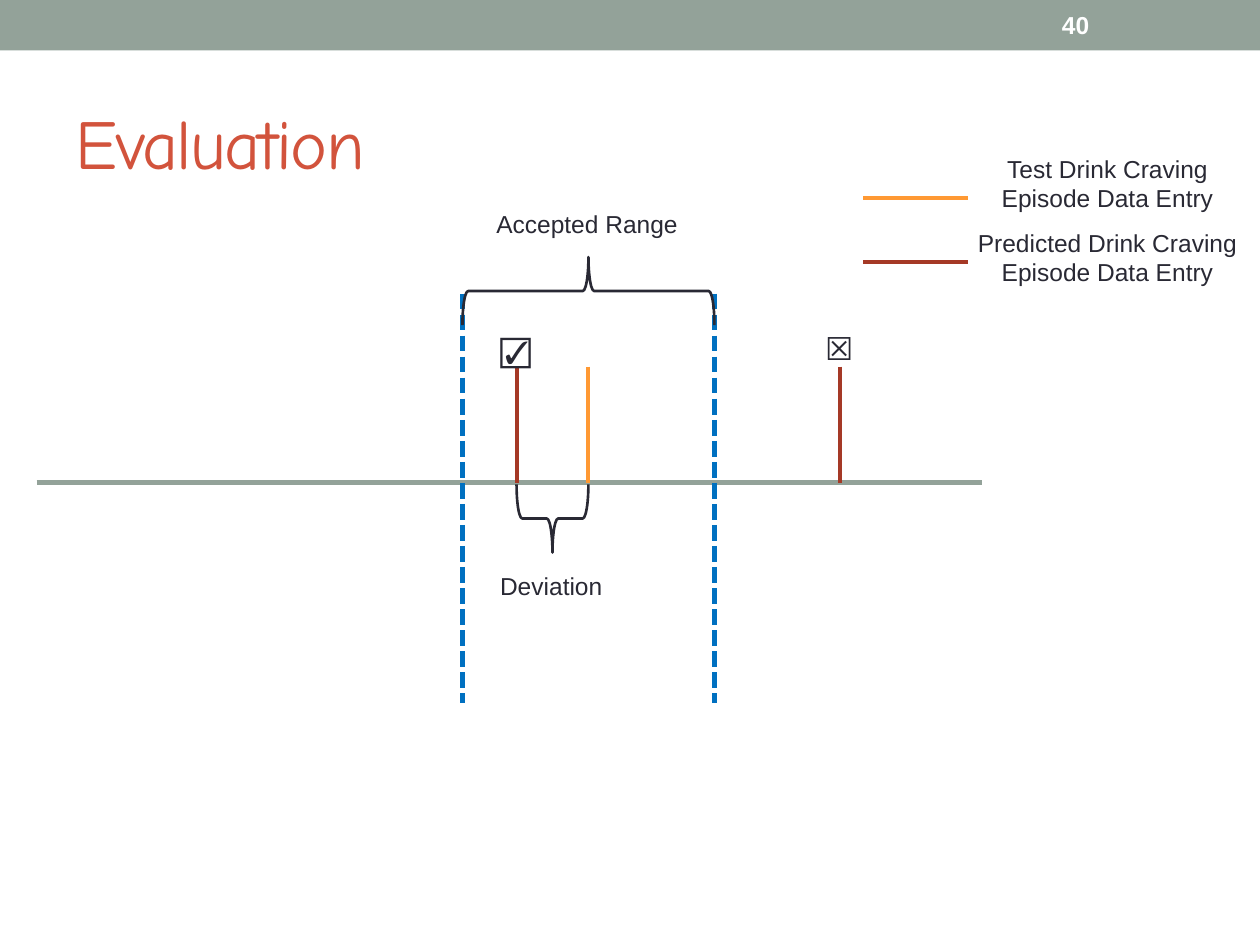
from pptx import Presentation
from pptx.dml.color import RGBColor
from pptx.enum.dml import MSO_LINE
from pptx.enum.shapes import MSO_CONNECTOR, MSO_SHAPE
from pptx.enum.text import MSO_ANCHOR, MSO_AUTO_SIZE, PP_ALIGN
from pptx.oxml.xmlchemy import OxmlElement
from pptx.util import Inches, Pt

SAGE = RGBColor(0x93, 0xA2, 0x99)
RED = RGBColor(0xD2, 0x53, 0x3C)
DARK_RED = RGBColor(0xA5, 0x39, 0x26)
ORANGE = RGBColor(0xFF, 0x99, 0x33)
BLUE = RGBColor(0x00, 0x70, 0xC0)
INK = RGBColor(0x29, 0x29, 0x34)
WHITE = RGBColor(0xFF, 0xFF, 0xFF)


def box_inches(*lengths):
    return [Inches(length) for length in lengths]


def add_run(paragraph, text, size, color, font="Arial", bold=False):
    run = paragraph.add_run()
    run.text = text
    run.font.name = font
    run.font.size = Pt(size)
    run.font.bold = bold
    run.font.color.rgb = color
    return run


def add_label(slide, box, text, size=14, color=INK, bold=False,
              align=PP_ALIGN.LEFT, wrap=False, anchor=MSO_ANCHOR.TOP):
    frame = slide.shapes.add_textbox(*box_inches(*box)).text_frame
    frame.word_wrap = wrap
    frame.auto_size = MSO_AUTO_SIZE.NONE if bold else MSO_AUTO_SIZE.SHAPE_TO_FIT_TEXT
    frame.vertical_anchor = anchor
    frame.paragraphs[0].alignment = align
    add_run(frame.paragraphs[0], text, size, color, bold=bold)


def add_line(slide, start, end, color, width=2.25, dash=None):
    line = slide.shapes.add_connector(
        MSO_CONNECTOR.STRAIGHT, *box_inches(*start, *end))
    line.line.color.rgb = color
    line.line.width = Pt(width)
    if dash:
        line.line.dash_style = dash
    line._element.spPr.append(OxmlElement("a:effectLst"))


def add_brace(slide, center_x, center_y, span, depth, rotation):
    """Draw a horizontal brace, given its size as seen after rotation."""
    brace = slide.shapes.add_shape(MSO_SHAPE.LEFT_BRACE, *box_inches(
        center_x - depth / 2, center_y - span / 2, depth, span))
    brace.rotation = rotation
    brace.shadow.inherit = False
    brace.fill.background()
    brace.line.color.rgb = INK
    brace.line.width = Pt(1.5)


def add_header(slide, left, top, width, height):
    band = slide.shapes.add_shape(
        MSO_SHAPE.RECTANGLE, *box_inches(left, top, width, height))
    band.shadow.inherit = False
    band.fill.solid()
    band.fill.fore_color.rgb = SAGE
    band.line.fill.background()
    add_label(slide, (left + width - 1.67, top + 0.02, 1.17, height - 0.04), "40",
              color=WHITE, bold=True, wrap=True, anchor=MSO_ANCHOR.MIDDLE)


def add_title(slide, left, top, width, height):
    title = slide.shapes.title
    title.left, title.top, title.width, title.height = box_inches(
        left, top, width, height)
    frame = title.text_frame
    frame.vertical_anchor = MSO_ANCHOR.MIDDLE
    frame.auto_size = MSO_AUTO_SIZE.NONE
    frame.paragraphs[0].alignment = PP_ALIGN.LEFT
    run = add_run(frame.paragraphs[0], "Evaluation", 40, RED, "Comic Neue")
    run.font._element.set("spc", "-100")


def add_timeline(slide, left, top, width, height):
    axis = top + 2.22
    entry = left + 4.38
    accepted, rejected = entry - 0.57, entry + 2
    tick_top = axis - 0.92

    add_line(slide, (left, axis), (left + width, axis), SAGE, 3)
    for x, color in ((entry, ORANGE), (accepted, DARK_RED), (rejected, DARK_RED)):
        add_line(slide, (x, tick_top), (x, axis), color)
    for x in (entry - 1, entry + 1):
        add_line(slide, (x, top + 0.72), (x, top + height), BLUE, 3,
                 MSO_LINE.SQUARE_DOT)

    add_brace(slide, entry, top + 0.7, 2, 0.54, 90)
    add_label(slide, (entry - 0.83, top, 1.65, 0.34), "Accepted Range")
    add_brace(slide, (accepted + entry) / 2, axis + 0.285, 0.57, 0.54, 270)
    add_label(slide, (entry - 0.8, axis + 0.65, 1.02, 0.34), "Deviation")

    for x, y, mark in ((accepted - 0.23, 0.97, "☑"), (rejected - 0.22, 0.95, "☒")):
        add_label(slide, (x, top + y, 0.43, 0.4), mark, 18)


def add_legend(slide, left, top, width, height):
    row_height = 0.57
    entries = (
        ("Test Drink Craving Episode Data Entry", ORANGE, 2.22, 0, 0.4),
        ("Predicted Drink Craving Episode Data Entry", DARK_RED, 2.74,
         height - row_height, 0.91),
    )
    text_center = left + width - 1.37
    for text, color, text_width, text_y, line_y in entries:
        add_line(slide, (left, top + line_y), (left + 0.83, top + line_y), color)
        add_label(slide, (text_center - text_width / 2, top + text_y,
                          text_width, row_height),
                  text, align=PP_ALIGN.CENTER, wrap=True)


def main():
    presentation = Presentation()
    presentation.slide_width, presentation.slide_height = box_inches(10, 7.5)
    slide = presentation.slides.add_slide(presentation.slide_layouts[5])
    add_header(slide, 0, 0, 10, 0.4)
    add_title(slide, 0.5, 0.58, 9, 1.08)
    add_timeline(slide, 0.29, 1.61, 7.5, 3.97)
    add_legend(slide, 6.85, 1.17, 3.31, 1.16)
    presentation.save("out.pptx")


if __name__ == "__main__":
    main()
